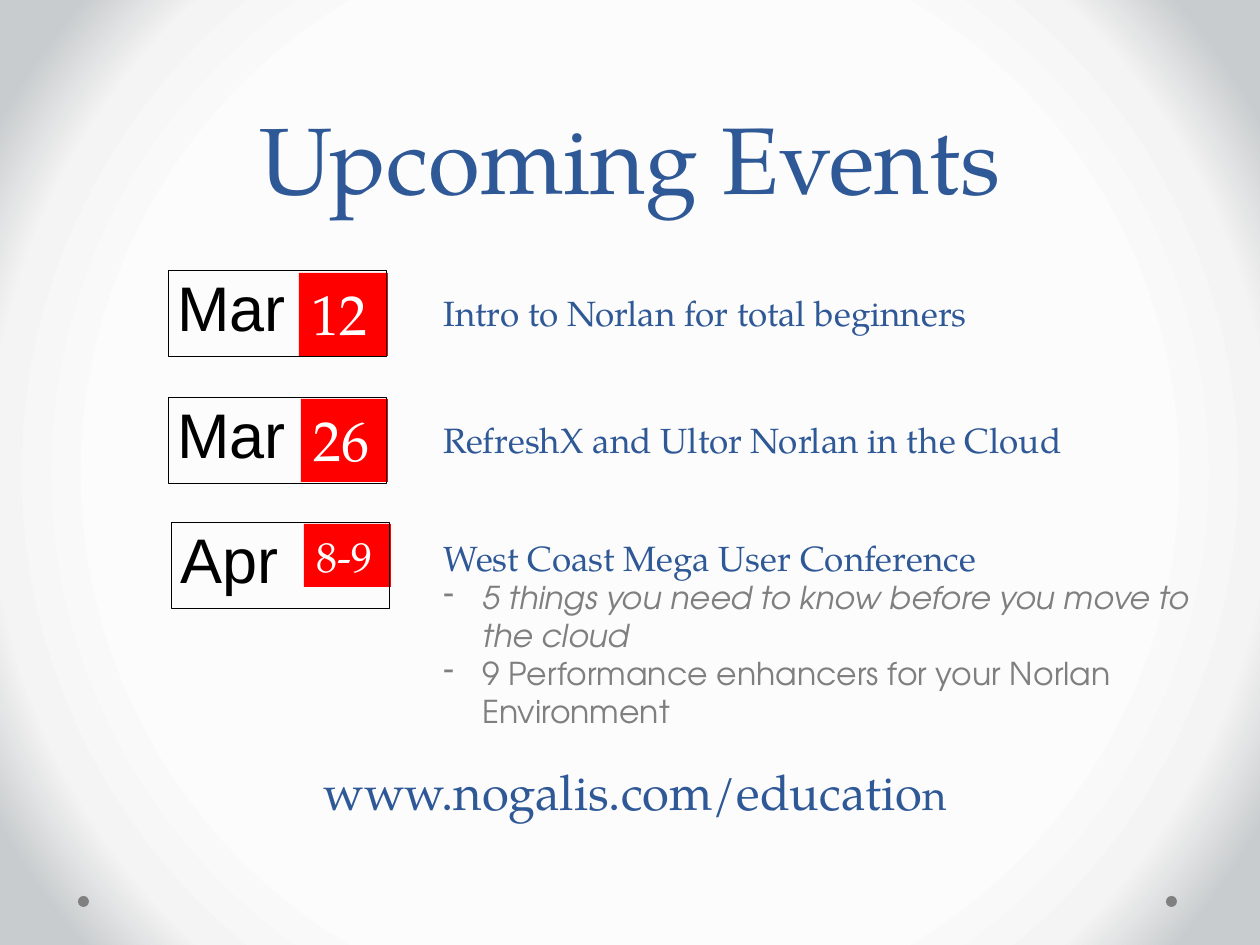
from lxml import etree
from pptx import Presentation
from pptx.dml.color import RGBColor
from pptx.enum.shapes import MSO_SHAPE
from pptx.enum.text import MSO_ANCHOR, PP_ALIGN
from pptx.oxml import parse_xml
from pptx.oxml.ns import qn
from pptx.util import Emu, Pt

RECTANGLE, OVAL = MSO_SHAPE.RECTANGLE, MSO_SHAPE.OVAL
TOP, BOTTOM = MSO_ANCHOR.TOP, MSO_ANCHOR.BOTTOM
LEFT, CENTER = PP_ALIGN.LEFT, PP_ALIGN.CENTER
BLUE = RGBColor(0x2F, 0x58, 0x97)
RED = RGBColor(0xFF, 0x00, 0x00)
BLACK = RGBColor(0x00, 0x00, 0x00)
WHITE = RGBColor(0xFF, 0xFF, 0xFF)
DOT_GRAY = RGBColor(0x80, 0x80, 0x80)
TEXT_GRAY = RGBColor(0x7F, 0x7F, 0x7F)
SERIF, SANS, ROUND = "TeX Gyre Pagella", "Arial", "TeX Gyre Adventor"
PX = 914400 / 126
INDENT = round(39 * PX)

deck = Presentation()
deck.slide_width, deck.slide_height = Emu(round(1260 * PX)), Emu(round(945 * PX))
page = deck.slides.add_slide(deck.slide_layouts[6])

stops = "".join(
    f'<a:gs pos="{percent * 1000}"><a:srgbClr val="{color}"/></a:gs>'
    for percent, color in ((66, "FCFCFC"), (81, "F4F4F4"), (92, "C8CCCE"))
)
background = parse_xml(
    '<p:bg xmlns:p="http://schemas.openxmlformats.org/presentationml/2006/main"'
    ' xmlns:a="http://schemas.openxmlformats.org/drawingml/2006/main">'
    f'<p:bgPr><a:gradFill rotWithShape="1"><a:gsLst>{stops}</a:gsLst>'
    '<a:path path="circle"><a:fillToRect l="50000" t="50000" r="50000" b="50000"/></a:path>'
    "</a:gradFill><a:effectLst/></p:bgPr></p:bg>"
)
page.element.cSld.insert(0, background)


def add_block(place, fill=None, line=None, kind=RECTANGLE):
    shape = page.shapes.add_shape(kind, *(Emu(round(value * PX)) for value in place))
    shape.shadow.inherit = False
    if fill is None:
        shape.fill.background()
    else:
        shape.fill.solid()
        shape.fill.fore_color.rgb = fill
    if line is None:
        shape.line.fill.background()
    else:
        shape.line.color.rgb = line
        shape.line.width = Pt(0.25)
    return shape


def write(place, text, size, font, color, shape=None, wrap=True):
    box = shape or page.shapes.add_textbox(*(Emu(round(value * PX)) for value in place))
    frame = box.text_frame
    frame.word_wrap = wrap
    frame.vertical_anchor = TOP
    frame.text = text
    para = frame.paragraphs[0]
    para.alignment = LEFT
    span = para.runs[0]
    span.font.size, span.font.name, span.font.color.rgb = Pt(size), font, color
    return frame


for left in (1166, 78):
    add_block((left, 896, 11, 11), DOT_GRAY, kind=OVAL)

title = write((63, 0, 1134, 220), "Upcoming Events", 54, SERIF, BLUE)
title.vertical_anchor = BOTTOM
title.paragraphs[0].alignment = CENTER
title.paragraphs[0].line_spacing = Pt(58)

events = [
    ("Mar", (165, 262), "12", 32, (299, 273, 89, 83), (168, 270),
     "Intro to Norlan for total beginners", (431, 285, 693, 55)),
    ("Mar", (165, 389), "26", 32, (301, 399, 87, 83), (168, 397),
     "RefreshX and Ultor Norlan in the Cloud", (431, 412, 693, 55)),
    ("Apr", (168, 514), "8-9", 24, (304, 524, 87, 63), (171, 522),
     "West Coast Mega User Conference", (431, 530, 777, 208)),
]
for month, month_at, day, day_size, day_place, frame_at, event, event_place in events:
    write((*month_at, 142, 89), month, 36, SANS, BLACK)
    write(day_place, day, day_size, SERIF, WHITE, add_block(day_place, RED))
    add_block((*frame_at, 218, 86), line=BLACK)
    details = write(event_place, event, 20, SERIF, BLUE)

talks = [
    ("5 things you need to know before you move to the cloud", True),
    ("9 Performance enhancers for your Norlan Environment", False),
]
for talk, italic in talks:
    para = details.add_paragraph()
    para.text = talk
    properties = para._p.get_or_add_pPr()
    properties.set("marL", str(INDENT))
    properties.set("indent", str(-INDENT))
    etree.SubElement(properties, qn("a:buChar")).set("char", "-")
    font = para.runs[0].font
    font.size, font.name, font.italic = Pt(18), ROUND, italic
    font.color.rgb = TEXT_GRAY

address = write((311, 755, 659, 72), "www.nogalis.com/educatio", 28, SERIF, BLUE, wrap=False)
span = address.paragraphs[0].add_run()
span.text = "n"
span.font.size, span.font.name, span.font.color.rgb = Pt(24), SERIF, BLUE

deck.save("out.pptx")
